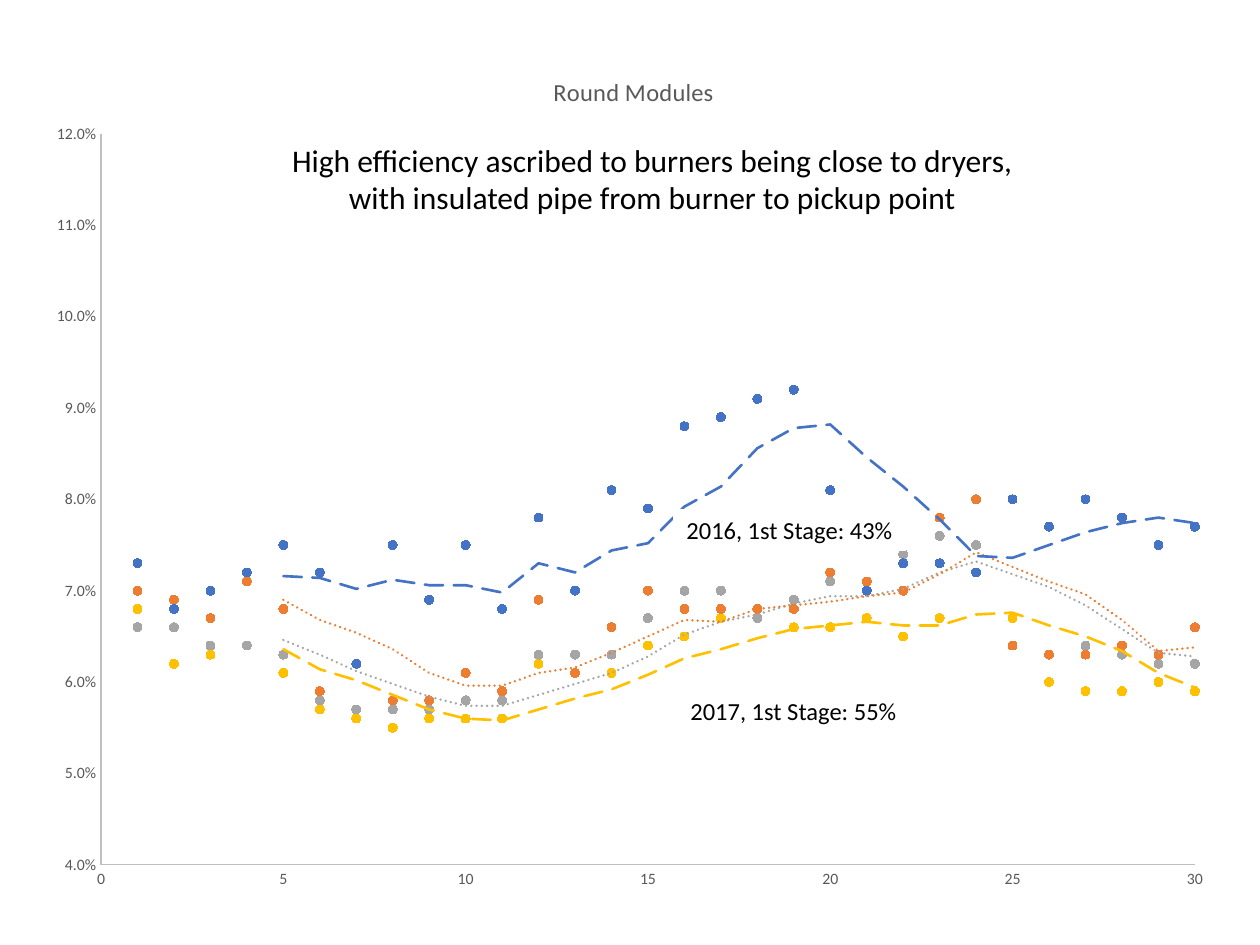
from lxml import etree
from pptx import Presentation
from pptx.chart.data import XyChartData
from pptx.dml.color import RGBColor
from pptx.enum.chart import XL_CHART_TYPE, XL_MARKER_STYLE, XL_TICK_MARK
from pptx.enum.shapes import MSO_SHAPE
from pptx.enum.text import MSO_ANCHOR, PP_ALIGN
from pptx.oxml import parse_xml
from pptx.oxml.ns import nsdecls, qn
from pptx.util import Emu, Pt

PX_PER_INCH = 126
EMU_PER_PX = 914400 / PX_PER_INCH
FONT = "Calibri"

BLACK = RGBColor(0x00, 0x00, 0x00)
WHITE = RGBColor(0xFF, 0xFF, 0xFF)
GRAY = RGBColor(0x59, 0x59, 0x59)
AXIS_GRAY = RGBColor(0xBF, 0xBF, 0xBF)
BLUE = RGBColor(0x44, 0x72, 0xC4)
ORANGE = RGBColor(0xED, 0x7D, 0x31)
SILVER = RGBColor(0xA5, 0xA5, 0xA5)
GOLD = RGBColor(0xFF, 0xC0, 0x00)

SCATTER = XL_CHART_TYPE.XY_SCATTER
CIRCLE = XL_MARKER_STYLE.CIRCLE
NO_TICK = XL_TICK_MARK.NONE
RECTANGLE = MSO_SHAPE.RECTANGLE
CENTER = PP_ALIGN.CENTER
MIDDLE = MSO_ANCHOR.MIDDLE

CHART_BOX = (33, 39, 1194, 867)
PLOT_BOX = (101, 134, 1094, 731)
TITLE_CORNER = (549, 71)
AVERAGE_PERIOD = 5

SERIES = [
    ("Series 1", BLUE, "lgDash",
     [7.3, 6.8, 7.0, 7.2, 7.5, 7.2, 6.2, 7.5, 6.9, 7.5,
      6.8, 7.8, 7.0, 8.1, 7.9, 8.8, 8.9, 9.1, 9.2, 8.1,
      7.0, 7.3, 7.3, 7.2, 8.0, 7.7, 8.0, 7.8, 7.5, 7.7]),
    ("Series 2", ORANGE, "sysDot",
     [7.0, 6.9, 6.7, 7.1, 6.8, 5.9, 6.2, 5.8, 5.8, 6.1,
      5.9, 6.9, 6.1, 6.6, 7.0, 6.8, 6.8, 6.8, 6.8, 7.2,
      7.1, 7.0, 7.8, 8.0, 6.4, 6.3, 6.3, 6.4, 6.3, 6.6]),
    ("Series 3", SILVER, "sysDot",
     [6.6, 6.6, 6.4, 6.4, 6.3, 5.8, 5.7, 5.7, 5.7, 5.8,
      5.8, 6.3, 6.3, 6.3, 6.7, 7.0, 7.0, 6.7, 6.9, 7.1,
      7.0, 7.4, 7.6, 7.5, 6.4, 6.3, 6.4, 6.3, 6.2, 6.2]),
    ("Series 4", GOLD, "lgDash",
     [6.8, 6.2, 6.3, 6.4, 6.1, 5.7, 5.6, 5.5, 5.6, 5.6,
      5.6, 6.2, 6.1, 6.1, 6.4, 6.5, 6.7, 6.7, 6.6, 6.6,
      6.7, 6.5, 6.7, 7.2, 6.7, 6.0, 5.9, 5.9, 6.0, 5.9]),
]

NOTES = [
    ((105, 134, 1095, 89), 18,
     ["High efficiency ascribed to burners being close to dryers,",
      "with insulated pipe from burner to pickup point"]),
    ((673, 509, 233, 42), 14, ["2016, 1st Stage: 43%"]),
    ((677, 690, 233, 42), 14, ["2017, 1st Stage: 55%"]),
]


def px(length):
    return Emu(round(length * EMU_PER_PX))


def apply(target, values):
    for name, value in values.items():
        setattr(target, name, value)


def style_font(font, size, color):
    apply(font, {"name": FONT, "size": Pt(size), "bold": False})
    font.color.rgb = color


def layout_xml(box, inner=False):
    left, top, width, height = CHART_BOX
    shares = [(box[0] - left) / width, (box[1] - top) / height]
    shares += [length / whole for length, whole in zip(box[2:], (width, height))]
    target = '<c:layoutTarget val="inner"/>' if inner else ""
    modes = '<c:xMode val="edge"/><c:yMode val="edge"/>'
    places = "".join(f'<c:{name} val="{share:.4f}"/>' for name, share in zip("xywh", shares))
    return parse_xml(
        f'<c:layout {nsdecls("c")}><c:manualLayout>{target}{modes}{places}'
        "</c:manualLayout></c:layout>")


def replace_layout(parent, position, layout):
    for old in parent.findall(qn("c:layout")):
        parent.remove(old)
    parent.insert(position, layout)


def add_moving_average(series, color, dash):
    trend = parse_xml(
        f'<c:trendline {nsdecls("c", "a")}><c:spPr><a:ln w="{Pt(1.5)}" cap="rnd">'
        f'<a:solidFill><a:srgbClr val="{color}"/></a:solidFill>'
        f'<a:prstDash val="{dash}"/></a:ln></c:spPr>'
        f'<c:trendlineType val="movingAvg"/><c:period val="{AVERAGE_PERIOD}"/>'
        '<c:dispRSqr val="0"/><c:dispEq val="0"/></c:trendline>')
    series._element.find(qn("c:xVal")).addprevious(trend)


def style_series(series, color, dash):
    series.format.line.fill.background()
    apply(series.marker, {"style": CIRCLE, "size": 5})
    series.marker.format.fill.solid()
    series.marker.format.fill.fore_color.rgb = color
    series.marker.format.line.color.rgb = color
    add_moving_average(series, color, dash)


def style_axis(axis, low, high, step, number_format):
    apply(axis, {"minimum_scale": low, "maximum_scale": high, "major_unit": step,
                 "has_major_gridlines": False, "has_title": False,
                 "major_tick_mark": NO_TICK, "minor_tick_mark": NO_TICK})
    apply(axis.tick_labels, {"number_format": number_format, "number_format_is_linked": False})
    style_font(axis.tick_labels.font, 9, GRAY)
    axis.format.line.color.rgb = AXIS_GRAY
    axis.format.line.width = Pt(0.75)


def add_title(chart, text):
    chart.has_title = True
    title = chart.chart_title
    title.include_in_layout = False
    title.text_frame.text = text
    style_font(title.text_frame.paragraphs[0].runs[0].font, 14, GRAY)
    replace_layout(title._element, 1, layout_xml(TITLE_CORNER))


def add_scatter(page):
    data = XyChartData(number_format="0.0%")
    for name, _, _, percents in SERIES:
        points = data.add_series(name)
        for day, percent in enumerate(percents, 1):
            points.add_data_point(day, round(percent / 100, 3))
    chart = page.shapes.add_chart(SCATTER, *map(px, CHART_BOX), data).chart
    chart.has_legend = False
    style_font(chart.font, 10, BLACK)
    add_title(chart, "Round Modules")
    chart.plots[0].vary_by_categories = False
    for series, (_, color, dash, _) in zip(chart.plots[0].series, SERIES):
        series.smooth = False
        style_series(series, color, dash)
    style_axis(chart.category_axis, 0, 30, 5, "General")
    style_axis(chart.value_axis, 0.04, 0.12, 0.01, "0.0%")
    plot_area = chart._chartSpace.find(f'{qn("c:chart")}/{qn("c:plotArea")}')
    replace_layout(plot_area, 0, layout_xml(PLOT_BOX, inner=True))


def add_note(page, bounds, size, lines):
    box = page.shapes.add_shape(RECTANGLE, *map(px, bounds))
    box.shadow.inherit = False
    box.fill.solid()
    box.fill.fore_color.rgb = WHITE
    box.line.fill.background()
    frame = box.text_frame
    apply(frame, {"word_wrap": True, "vertical_anchor": MIDDLE})
    frame.text = "\n".join(lines)
    for para in frame.paragraphs:
        para.alignment = CENTER
        style_font(para.runs[0].font, size, BLACK)


def main():
    deck = Presentation()
    apply(deck, {"slide_width": px(1260), "slide_height": px(945)})
    page = deck.slides.add_slide(deck.slide_layouts[6])
    add_scatter(page)
    for bounds, size, lines in NOTES:
        add_note(page, bounds, size, lines)
    deck.save("out.pptx")


if __name__ == "__main__":
    main()
